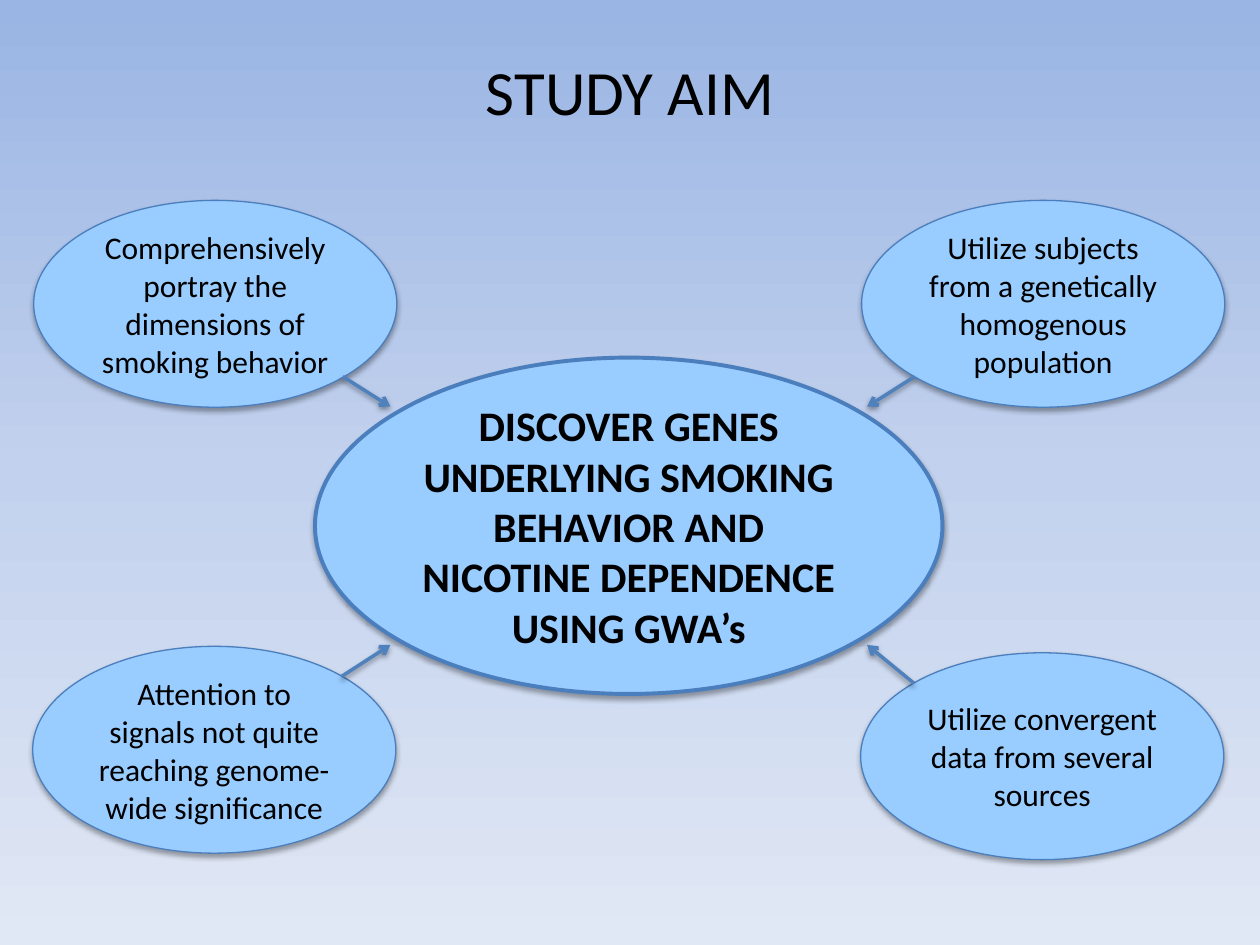
from copy import deepcopy

from lxml import etree
from pptx import Presentation
from pptx.dml.color import RGBColor
from pptx.enum.shapes import MSO_CONNECTOR, MSO_SHAPE
from pptx.enum.text import MSO_ANCHOR, PP_ALIGN
from pptx.oxml.ns import qn
from pptx.util import Cm, Pt

ELLIPSE = MSO_SHAPE.OVAL
STRAIGHT = MSO_CONNECTOR.STRAIGHT
MIDDLE = MSO_ANCHOR.MIDDLE
CENTER = PP_ALIGN.CENTER

COLORS = {
    "sky top": "9AB5E4",
    "sky middle": "C2D1ED",
    "sky bottom": "E1E8F5",
    "bubble": "99CCFF",
    "outline": "4B7EBC",
    "arrow": "4F81BD",
    "text": "000000",
    "shadow": "000000",
}
TITLE_ONLY_LAYOUT = 5
AIM_SIZE = (7.32, 4.17)

AIMS = [
    (0.66, 13.03, "Attention to signals not quite reaching genome-wide significance"),
    (17.37, 4.04, "Utilize subjects from a genetically homogenous population"),
    (0.68, 4.04, "Comprehensively portray the dimensions of smoking behavior"),
    (17.35, 13.16, "Utilize convergent data from several sources"),
]
ARROWS = [
    ((6.91, 7.59), (7.87, 8.2)),
    ((18.44, 7.59), (17.48, 8.2)),
    ((6.88, 13.64), (7.87, 13)),
    ((18.42, 13.77), (17.48, 13)),
]


def color(name):
    return RGBColor.from_string(COLORS[name])


class SlideBuilder:
    font_name = "Calibri"

    def __init__(self, presentation):
        layout = presentation.slide_layouts[TITLE_ONLY_LAYOUT]
        self.slide = presentation.slides.add_slide(layout)

    def background(self, *names):
        """Fill the slide from top to bottom with three evenly spaced colours."""
        fill = self.slide.background.fill
        fill.gradient()
        fill.gradient_angle = 270
        stop_list = next(self.slide.element.iter(qn("a:gsLst")))
        stop_list.insert(1, deepcopy(stop_list[0]))
        for index, (stop, name) in enumerate(zip(fill.gradient_stops, names)):
            stop.position = index / (len(names) - 1)
            stop.color.rgb = color(name)

    def text(self, shape, text, size, bold=False):
        frame = shape.text_frame
        frame.text = text
        frame.word_wrap = True
        frame.vertical_anchor = MIDDLE
        paragraph = frame.paragraphs[0]
        paragraph.alignment = CENTER
        font = paragraph.font
        font.name = self.font_name
        font.size = Pt(size)
        font.bold = bold
        font.color.rgb = color("text")

    def shadow(self, shape, opacity, distance):
        """Add a soft shadow straight below; opacity in percent, distance in points."""
        effects = etree.SubElement(shape.element.spPr, qn("a:effectLst"))
        outer = etree.SubElement(
            effects, qn("a:outerShdw"), blurRad=str(Pt(3.1)),
            dist=str(Pt(distance)), dir="5400000", rotWithShape="0")
        tint = etree.SubElement(outer, qn("a:srgbClr"), val=COLORS["shadow"])
        etree.SubElement(tint, qn("a:alpha"), val=str(opacity * 1000))

    def title(self, text, left, top, width, height):
        title = self.slide.shapes.title
        title.left, title.top = Cm(left), Cm(top)
        title.width, title.height = Cm(width), Cm(height)
        self.text(title, text, 36)

    def bubble(self, text, left, top, width, height, size=18, bold=False, outline=0.75):
        shape = self.slide.shapes.add_shape(
            ELLIPSE, Cm(left), Cm(top), Cm(width), Cm(height))
        shape.fill.solid()
        shape.fill.fore_color.rgb = color("bubble")
        shape.line.color.rgb = color("outline")
        shape.line.width = Pt(outline)
        self.shadow(shape, 35, 1.8)
        self.text(shape, text, size, bold)

    def arrow(self, start, end):
        connector = self.slide.shapes.add_connector(
            STRAIGHT, *(Cm(value) for value in (*start, *end)))
        connector.line.color.rgb = color("arrow")
        connector.line.width = Pt(2)
        line = connector.element.spPr.find(qn("a:ln"))
        etree.SubElement(line, qn("a:tailEnd"), type="arrow")
        self.shadow(connector, 38, 1.6)


def main():
    presentation = Presentation()
    presentation.slide_width, presentation.slide_height = Cm(25.4), Cm(19.05)
    builder = SlideBuilder(presentation)
    builder.background("sky top", "sky middle", "sky bottom")
    builder.title("STUDY AIM", 1.27, 0.23, 22.86, 3.18)
    builder.bubble(
        "DISCOVER GENES UNDERLYING SMOKING BEHAVIOR AND NICOTINE DEPENDENCE USING GWA’s",
        6.35, 7.21, 12.65, 6.78, size=24, bold=True, outline=2.25)
    for left, top, text in AIMS:
        builder.bubble(text, left, top, *AIM_SIZE)
    for start, end in ARROWS:
        builder.arrow(start, end)
    presentation.save("out.pptx")


if __name__ == "__main__":
    main()
